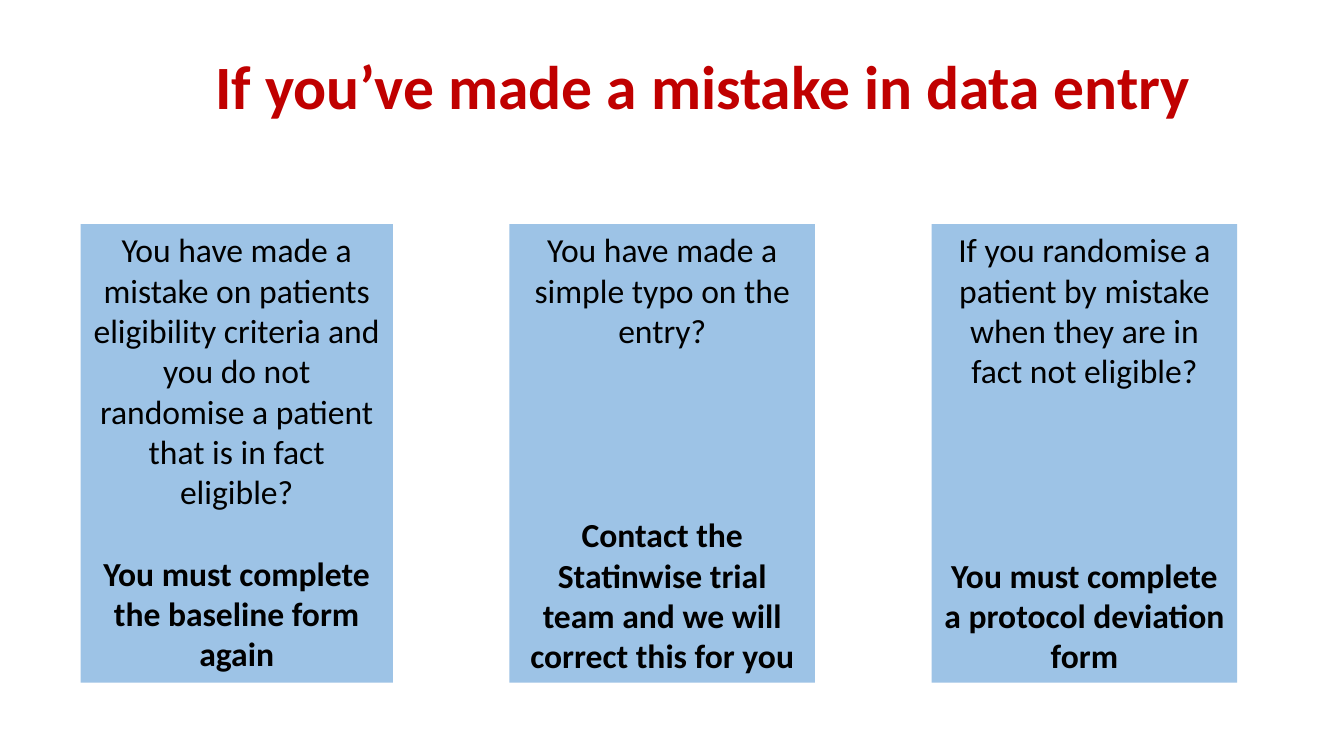
from dataclasses import dataclass

import pptx
import pptx.dml.color
import pptx.enum.shapes
import pptx.enum.text
import pptx.util

Cm = pptx.util.Cm
Pt = pptx.util.Pt
RGB = pptx.dml.color.RGBColor


@dataclass(frozen=True)
class Theme:
    font: str = "Calibri"
    heading_color: RGB = RGB(0xC0, 0x00, 0x00)
    panel_color: RGB = RGB(0x9D, 0xC3, 0xE6)
    body_color: RGB = RGB(0x00, 0x00, 0x00)
    heading_size: float = 44
    body_size: float = 24
    body_line: float = 29.3


THEME = Theme()
PANEL_TOP, PANEL_HEIGHT, PANEL_GAP = 5.65, 11.55, 2.94
FIRST_PANEL_LEFT = 2.03

# Panel width in cm, question, lines left free, answer
MISTAKES = [
    (7.87,
     "You have made a mistake on patients eligibility criteria and you do not "
     "randomise a patient that is in fact eligible?",
     1, "You must complete the baseline form again"),
    (7.7,
     "You have made a simple typo on the entry?",
     4, "Contact the Statinwise trial team and we will correct this for you"),
    (7.7,
     "If you randomise a patient by mistake when they are in fact not eligible?",
     4, "You must complete a protocol deviation form"),
]


def write_centred(paragraph, text, size, color, bold):
    paragraph.text = text
    paragraph.alignment = pptx.enum.text.PP_ALIGN.CENTER
    font = paragraph.runs[0].font
    font.name = THEME.font
    font.size = Pt(size)
    font.bold = bold
    font.color.rgb = color


def add_heading(slide, left, top, width, height, text):
    heading = slide.shapes.add_textbox(Cm(left), Cm(top), Cm(width), Cm(height))
    heading.text_frame.word_wrap = True
    line = heading.text_frame.paragraphs[0]
    write_centred(line, text, THEME.heading_size, THEME.heading_color, True)
    line.line_spacing = 0.9


def add_mistake_panel(slide, left, top, width, height, question, free_lines, answer):
    panel = slide.shapes.add_shape(
        pptx.enum.shapes.MSO_SHAPE.RECTANGLE,
        Cm(left), Cm(top), Cm(width), Cm(height))
    panel.shadow.inherit = False
    panel.fill.solid()
    panel.fill.fore_color.rgb = THEME.panel_color
    panel.line.fill.background()

    frame = panel.text_frame
    frame.word_wrap = True
    frame.vertical_anchor = pptx.enum.text.MSO_ANCHOR.TOP
    write_centred(frame.paragraphs[0], question,
                  THEME.body_size, THEME.body_color, False)
    advice = frame.add_paragraph()
    write_centred(advice, answer, THEME.body_size, THEME.body_color, True)
    advice.space_before = Pt(free_lines * THEME.body_line)


def main():
    deck = pptx.Presentation()
    deck.slide_width, deck.slide_height = Cm(33.87), Cm(19.05)
    slide = deck.slides.add_slide(deck.slide_layouts[6])

    add_heading(slide, 3.38, 1.3, 28.7, 1.5,
                "If you’ve made a mistake in data entry")
    left = FIRST_PANEL_LEFT
    for width, question, free_lines, answer in MISTAKES:
        add_mistake_panel(slide, left, PANEL_TOP, width, PANEL_HEIGHT,
                          question, free_lines, answer)
        left += width + PANEL_GAP

    deck.save("out.pptx")


if __name__ == "__main__":
    main()
